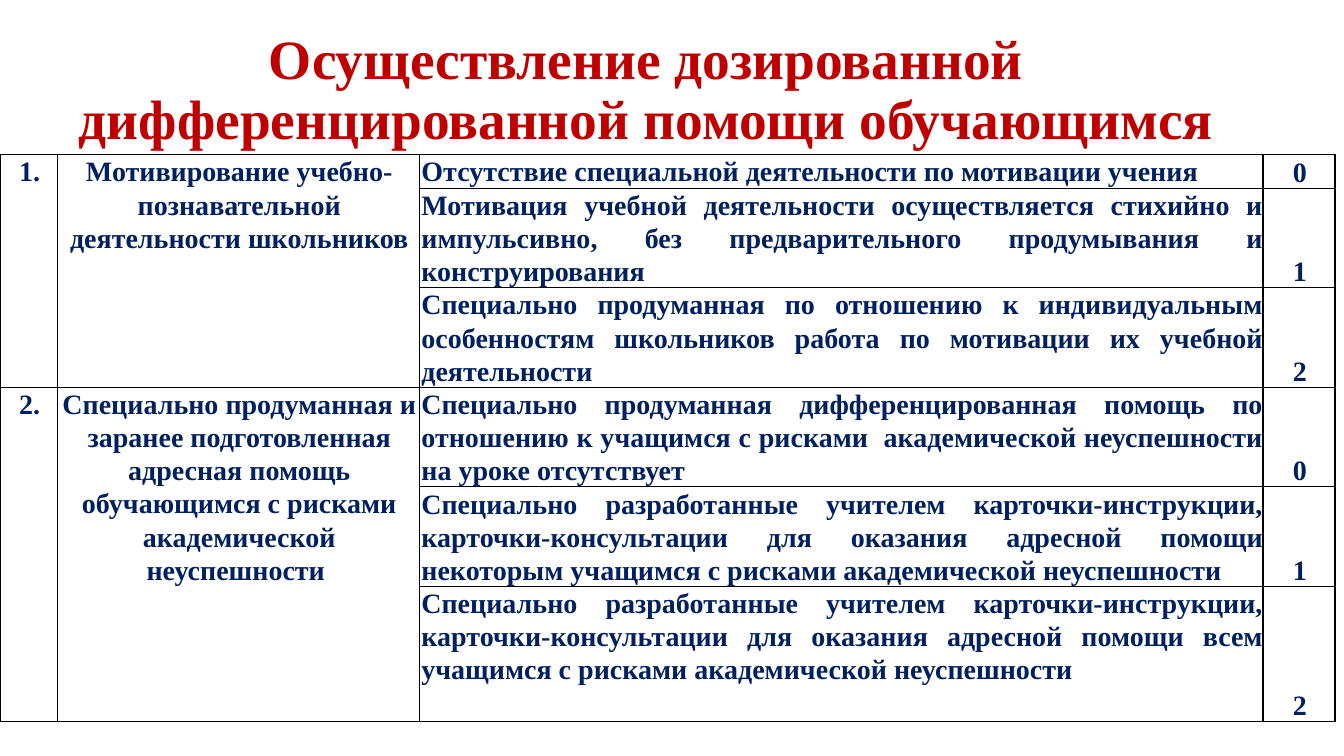
from dataclasses import dataclass

from lxml.etree import SubElement
from pptx import Presentation
from pptx.dml.color import RGBColor
from pptx.enum.text import MSO_ANCHOR, PP_ALIGN
from pptx.oxml.ns import qn
from pptx.slide import Slide
from pptx.table import Table, _Cell
from pptx.text.text import _Paragraph
from pptx.util import Pt

RED = RGBColor(0xC0, 0x00, 0x00)
NAVY = RGBColor(0x00, 0x20, 0x60)
WHITE = RGBColor(0xFF, 0xFF, 0xFF)
BLACK = RGBColor(0x00, 0x00, 0x00)
FONT = "Times New Roman"

TITLE = "Осуществление дозированной дифференцированной помощи обучающимся"
CELL_LINE = Pt(23.7)
COLUMN_WIDTHS = (40.9, 258.7, 602.6, 51.4)
ROW_HEIGHTS = (23.8, 71.1, 71.1, 71.1, 71.1, 96.4)


@dataclass
class Criterion:
    name: str
    levels: tuple[str, ...]  # the position of a level is its score


CRITERIA = (
    Criterion(
        "Мотивирование учебно-познавательной деятельности школьников",
        (
            "Отсутствие специальной деятельности по мотивации учения",
            "Мотивация учебной деятельности осуществляется стихийно и импульсивно, "
            "без предварительного продумывания и конструирования",
            "Специально продуманная по отношению к индивидуальным особенностям "
            "школьников работа по мотивации их учебной деятельности",
        ),
    ),
    Criterion(
        "Специально продуманная и заранее подготовленная адресная помощь "
        "обучающимся с рисками академической неуспешности ",
        (
            "Специально продуманная дифференцированная помощь по отношению к учащимся "
            "с рисками  академической неуспешности на уроке отсутствует",
            "Специально разработанные учителем карточки-инструкции, карточки-консультации "
            "для оказания адресной помощи некоторым учащимся с рисками академической неуспешности",
            "Специально разработанные учителем карточки-инструкции, карточки-консультации "
            "для оказания адресной помощи всем учащимся с рисками академической неуспешности",
        ),
    ),
)


def format_paragraph(p: _Paragraph, size: float, color: RGBColor,
                     align: PP_ALIGN, spacing: float | Pt) -> None:
    p.alignment = align
    p.line_spacing = spacing
    p.space_before = p.space_after = Pt(0)
    for r in p.runs:
        r.font.name = FONT
        r.font.size = Pt(size)
        r.font.bold = True
        r.font.color.rgb = color


def add_title(s: Slide) -> None:
    tf = s.shapes.add_textbox(Pt(14.4), Pt(13), Pt(894.2), Pt(104.4)).text_frame
    tf.word_wrap = True
    tf.vertical_anchor = MSO_ANCHOR.MIDDLE
    tf.text = TITLE
    format_paragraph(tf.paragraphs[0], 39.6, RED, PP_ALIGN.CENTER, 0.9)


def style_cell(cell: _Cell) -> None:
    """Black borders on every side, then a white fill."""
    cell.margin_left = Pt(1.44)
    cell.margin_top = cell.margin_right = cell.margin_bottom = 0
    tc_pr = cell._tc.get_or_add_tcPr()
    for side in ("a:lnL", "a:lnR", "a:lnT", "a:lnB"):
        ln = SubElement(tc_pr, qn(side), w=str(Pt(1)))
        fill = SubElement(ln, qn("a:solidFill"))
        SubElement(fill, qn("a:srgbClr"), val=str(BLACK))
    cell.fill.solid()
    cell.fill.fore_color.rgb = WHITE


def write_cell(cell: _Cell, text: str, align: PP_ALIGN = PP_ALIGN.CENTER,
               anchor: MSO_ANCHOR = MSO_ANCHOR.TOP) -> None:
    cell.text_frame.text = text
    cell.vertical_anchor = anchor
    format_paragraph(cell.text_frame.paragraphs[0], 20, NAVY, align, CELL_LINE)


def add_criteria_table(s: Slide) -> Table:
    table = s.shapes.add_table(
        len(ROW_HEIGHTS), len(COLUMN_WIDTHS), Pt(0), Pt(110.6),
        Pt(sum(COLUMN_WIDTHS)), Pt(sum(ROW_HEIGHTS))).table
    table.first_row = table.horz_banding = False
    for column, width in zip(table.columns, COLUMN_WIDTHS):
        column.width = Pt(width)
    for row, height in zip(table.rows, ROW_HEIGHTS):
        row.height = Pt(height)
    for cell in table.iter_cells():
        style_cell(cell)

    # Each criterion spans the rows of its levels
    top = 0
    for number, criterion in enumerate(CRITERIA, 1):
        bottom = top + len(criterion.levels) - 1
        for col, text in enumerate((f"{number}.", criterion.name)):
            table.cell(top, col).merge(table.cell(bottom, col))
            write_cell(table.cell(top, col), text)
        for score, level in enumerate(criterion.levels):
            write_cell(table.cell(top + score, 2), level, PP_ALIGN.JUSTIFY)
            write_cell(table.cell(top + score, 3), str(score), anchor=MSO_ANCHOR.BOTTOM)
        top = bottom + 1
    return table


def main() -> None:
    prs = Presentation()
    prs.slide_width, prs.slide_height = Pt(960), Pt(540)
    s = prs.slides.add_slide(prs.slide_layouts[6])
    add_title(s)
    add_criteria_table(s)
    prs.save("out.pptx")


if __name__ == "__main__":
    main()
